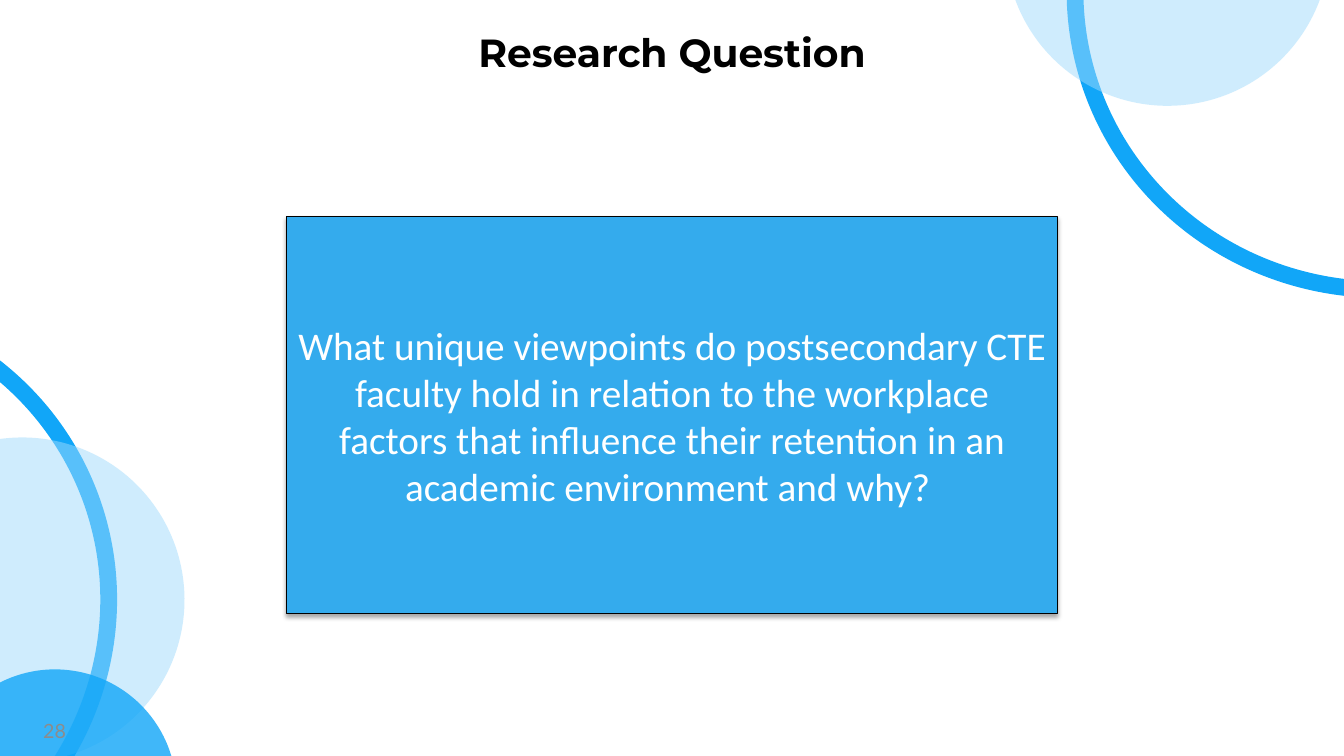
from dataclasses import dataclass

import lxml.etree
import pptx
import pptx.dml.color
import pptx.enum.shapes
import pptx.enum.text
import pptx.oxml.ns
import pptx.util
from pptx.util import Inches

BLUE, PALE, WHITE, BLACK = "11A6F8", "A0DBFC", "FFFFFF", "000000"
qn = pptx.oxml.ns.qn
PP_ALIGN = pptx.enum.text.PP_ALIGN
MIDDLE = pptx.enum.text.MSO_ANCHOR.MIDDLE
SHAPE = pptx.enum.shapes.MSO_SHAPE


@dataclass
class Circle:
    left: float
    top: float
    width: float
    height: float
    rotation: float
    fill: str
    opacity: int = 100
    ring: bool = False


CIRCLES = [
    # Lower left
    Circle(-5.04, 3.02, 6.13, 5.97, 157, WHITE, ring=True),
    Circle(-1.39, 4.34, 3.22, 3.22, 157, PALE, 50),
    Circle(-0.66, 6.64, 2.41, 2.41, 157, BLUE, 80),
    # Upper right
    Circle(10.66, -3.1, 6.13, 5.97, 350.4, WHITE, ring=True),
    Circle(9.97, -2.17, 3.22, 3.22, 350.4, PALE, 50),
]


def rgb(value: str) -> pptx.dml.color.RGBColor:
    return pptx.dml.color.RGBColor.from_string(value)


def set_opacity(color, percent: int) -> None:
    lxml.etree.SubElement(color, qn("a:alpha"), val=str(percent * 1000))


def write(shape, text: str, font: str, size: int, color: str, align, bold: bool = False):
    tf = shape.text_frame
    tf.word_wrap = True
    tf.vertical_anchor = MIDDLE
    p = tf.paragraphs[0]
    p.text = text
    p.alignment = align
    p.font.name, p.font.size, p.font.bold = font, pptx.util.Pt(size), bold
    p.font.color.rgb = rgb(color)
    return p


def add_circle(s, c: Circle) -> None:
    sp = s.shapes.add_shape(SHAPE.OVAL, Inches(c.left), Inches(c.top),
                            Inches(c.width), Inches(c.height))
    sp.rotation = c.rotation
    sp.shadow.inherit = False
    sp.fill.solid()
    sp.fill.fore_color.rgb = rgb(c.fill)
    if c.opacity < 100:
        set_opacity(sp._element.spPr.find(qn("a:solidFill"))[0], c.opacity)
    if c.ring:
        sp.line.color.rgb = rgb(BLUE)
        sp.line.width = pptx.util.Pt(12)
    else:
        sp.line.fill.background()


def add_drop_shadow(sp) -> None:
    sp.shadow.inherit = False
    effects = sp._element.spPr.find(qn("a:effectLst"))
    shadow = lxml.etree.SubElement(
        effects, qn("a:outerShdw"), blurRad=str(pptx.util.Pt(3.1)),
        dist=str(pptx.util.Pt(1.8)), dir=str(90 * 60000), rotWithShape="0")
    set_opacity(lxml.etree.SubElement(shadow, qn("a:srgbClr"), val=BLACK), 35)


def main() -> None:
    prs = pptx.Presentation()
    prs.slide_width, prs.slide_height = Inches(13.33), Inches(7.5)
    s = prs.slides.add_slide(prs.slide_layouts[5])

    # Title
    title = s.shapes.title
    title.left, title.top = Inches(0), Inches(0.22)
    title.width, title.height = Inches(13.33), Inches(0.64)
    p = write(title, "Research Question", "Montserrat", 28, BLACK, PP_ALIGN.CENTER, True)
    p.line_spacing = 0.9

    # Question panel
    panel = s.shapes.add_shape(SHAPE.RECTANGLE, Inches(2.84), Inches(2.15),
                               Inches(7.65), Inches(3.94))
    panel.fill.solid()
    panel.fill.fore_color.rgb = rgb("34ABED")
    panel.line.color.rgb = rgb(BLACK)
    panel.line.width = pptx.util.Pt(0.75)
    add_drop_shadow(panel)
    # Side margins keep "factors" on the third line
    panel.text_frame.margin_left = panel.text_frame.margin_right = Inches(0.11)
    write(panel, "What unique viewpoints do postsecondary CTE faculty hold in relation to "
          "the workplace factors that influence their retention in an academic "
          "environment and why? ", "Calibri", 28, WHITE, PP_ALIGN.CENTER)

    # Corner circles
    for circle in CIRCLES:
        add_circle(s, circle)

    # Slide number
    number = s.shapes.add_textbox(Inches(0.33), Inches(7.05), Inches(3.11), Inches(0.4))
    write(number, "28", "Lato", 14, "8C8C8C", PP_ALIGN.LEFT)

    prs.save("out.pptx")


if __name__ == "__main__":
    main()
